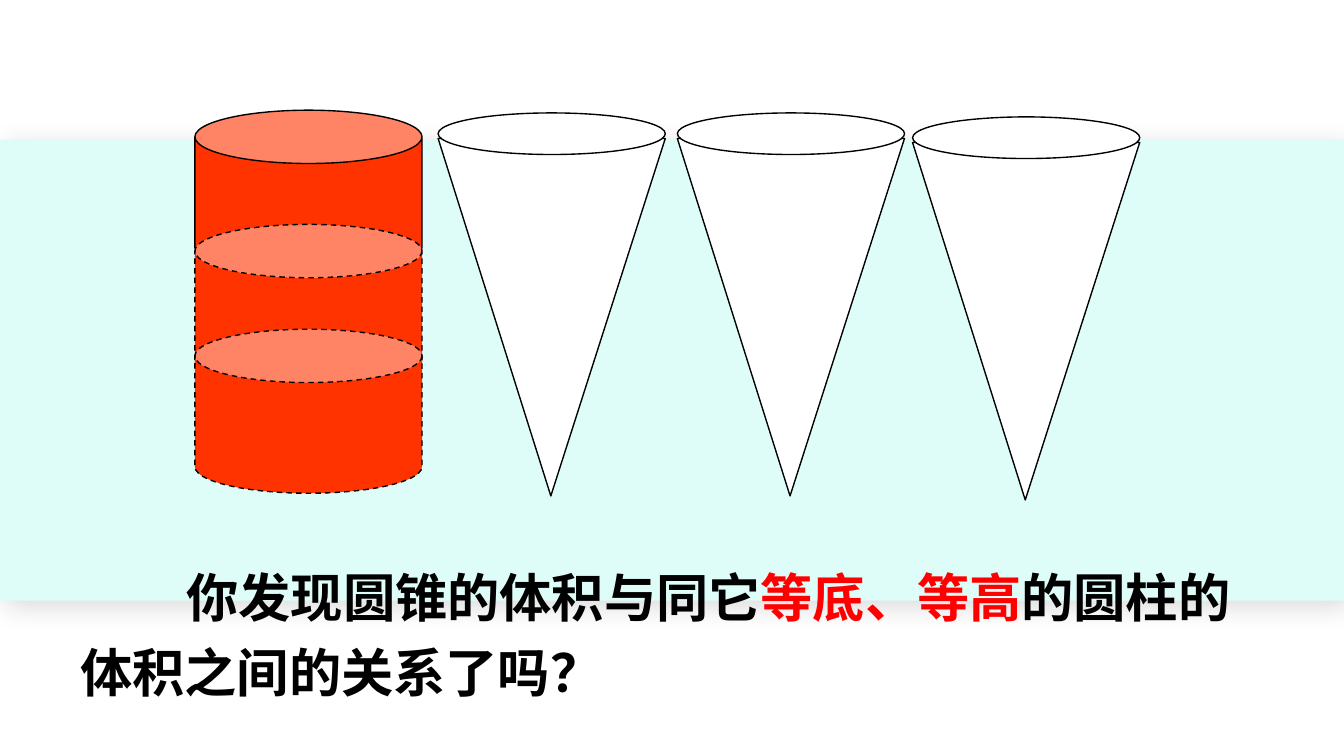
from lxml.etree import SubElement
from pptx import Presentation
from pptx.dml.color import RGBColor
from pptx.enum.dml import MSO_LINE
from pptx.enum.shapes import MSO_SHAPE
from pptx.enum.text import MSO_AUTO_SIZE
from pptx.oxml import parse_xml
from pptx.oxml.ns import nsdecls, qn
from pptx.util import Inches, Pt

WIDE = 10
HIGH = WIDE * 9 / 16
BODY = 1.69
FACE = "Noto Sans CJK SC"


def paint(part, color):
    part.rgb = RGBColor.from_string(color)


def draw(shapes, kind, box, fill, line=None):
    shape = shapes.add_shape(kind, *map(Inches, box))
    shape.shadow.inherit = False
    shape.fill.solid()
    paint(shape.fill.fore_color, fill)
    if line:
        shape.line.width = Pt(0.75)
        paint(shape.line.color, line)
    else:
        shape.line.fill.background()
    return shape


def band(slide):
    shape = draw(slide.shapes, MSO_SHAPE.RECTANGLE,
                 (0, 1.04, WIDE, 3.43), "DEFDF8")
    props = shape._element.spPr
    props.remove(props.find(qn("a:effectLst")))
    props.append(parse_xml(
        f'<a:effectLst {nsdecls("a")}>'
        f'<a:outerShdw blurRad="{Pt(15)}" dist="{Pt(5)}" dir="{45 * 60000}">'
        '<a:srgbClr val="000000"><a:alpha val="15000"/></a:srgbClr>'
        '</a:outerShdw></a:effectLst>'))


def cone(slide, left, top):
    shapes = slide.shapes.add_group_shape().shapes
    side = draw(shapes, MSO_SHAPE.ISOSCELES_TRIANGLE,
                (left, top + 0.19, BODY, 2.66), "FFFFFF", "000000")
    side.adjustments[0] = 0.504
    side.rotation = 180
    draw(shapes, MSO_SHAPE.OVAL, (left, top, BODY, 0.31), "FFFFFF", "000000")


def stack(slide, left, tops):
    shapes = slide.shapes.add_group_shape().shapes
    for row, top in enumerate(tops):
        can = draw(shapes, MSO_SHAPE.CAN, (left, top, BODY, 1.22),
                   "FF3300", "000000")
        can.adjustments[0] = 0.325
        if row:
            can.line.dash_style = MSO_LINE.DASH


def ask(slide, box, parts):
    frame = slide.shapes.add_textbox(*map(Inches, box)).text_frame
    frame.word_wrap = True
    frame.auto_size = MSO_AUTO_SIZE.SHAPE_TO_FIT_TEXT
    para = frame.paragraphs[0]
    para.line_spacing = 1.2
    para.font.size = Pt(28)
    para.font.bold = True
    para.font.name = FACE
    props = para._p.get_or_add_pPr()
    props.set("marL", "0")
    props.set("indent", str(Inches(0.79)))
    SubElement(props.find(qn("a:defRPr")), qn("a:ea"), typeface=FACE)
    for text, color in parts:
        run = para.add_run()
        run.text = text
        paint(run.font.color, color)


def main():
    deck = Presentation()
    deck.slide_width, deck.slide_height = Inches(WIDE), Inches(HIGH)
    slide = deck.slides.add_slide(deck.slide_layouts[6])
    band(slide)
    for left, top in ((5.04, 0.84), (6.79, 0.87), (3.26, 0.84)):
        cone(slide, left, top)
    stack(slide, 1.45, (0.82, 1.67, 2.45))
    ask(slide, (0.5, 4.06, 0.9 * WIDE, 1.23), (
        ("你发现圆锥的体积与同它", "000000"),
        ("等底、等高", "FF0000"),
        ("的圆柱的体积之间的关系了吗？", "000000")))
    deck.save("out.pptx")


if __name__ == "__main__":
    main()
